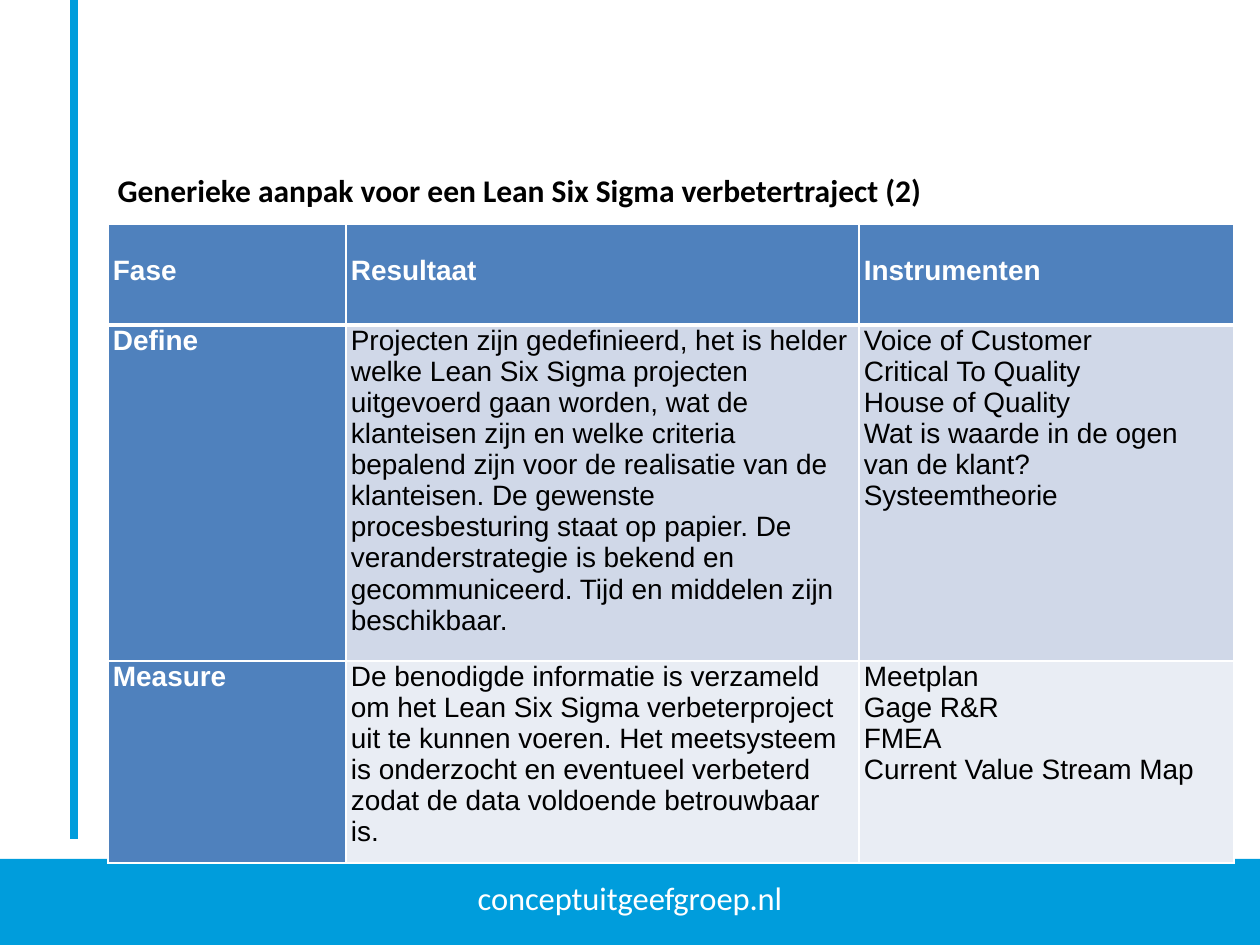
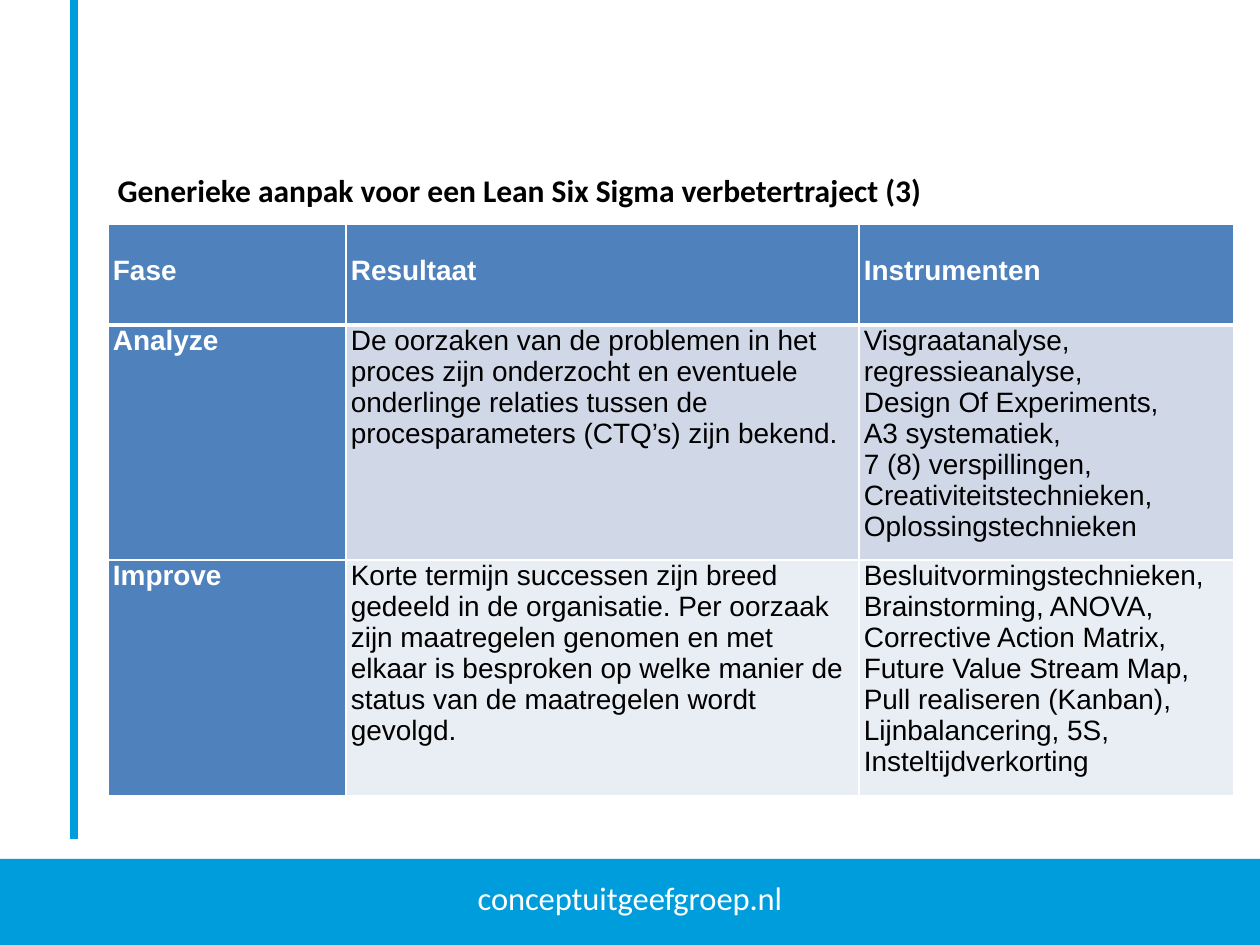
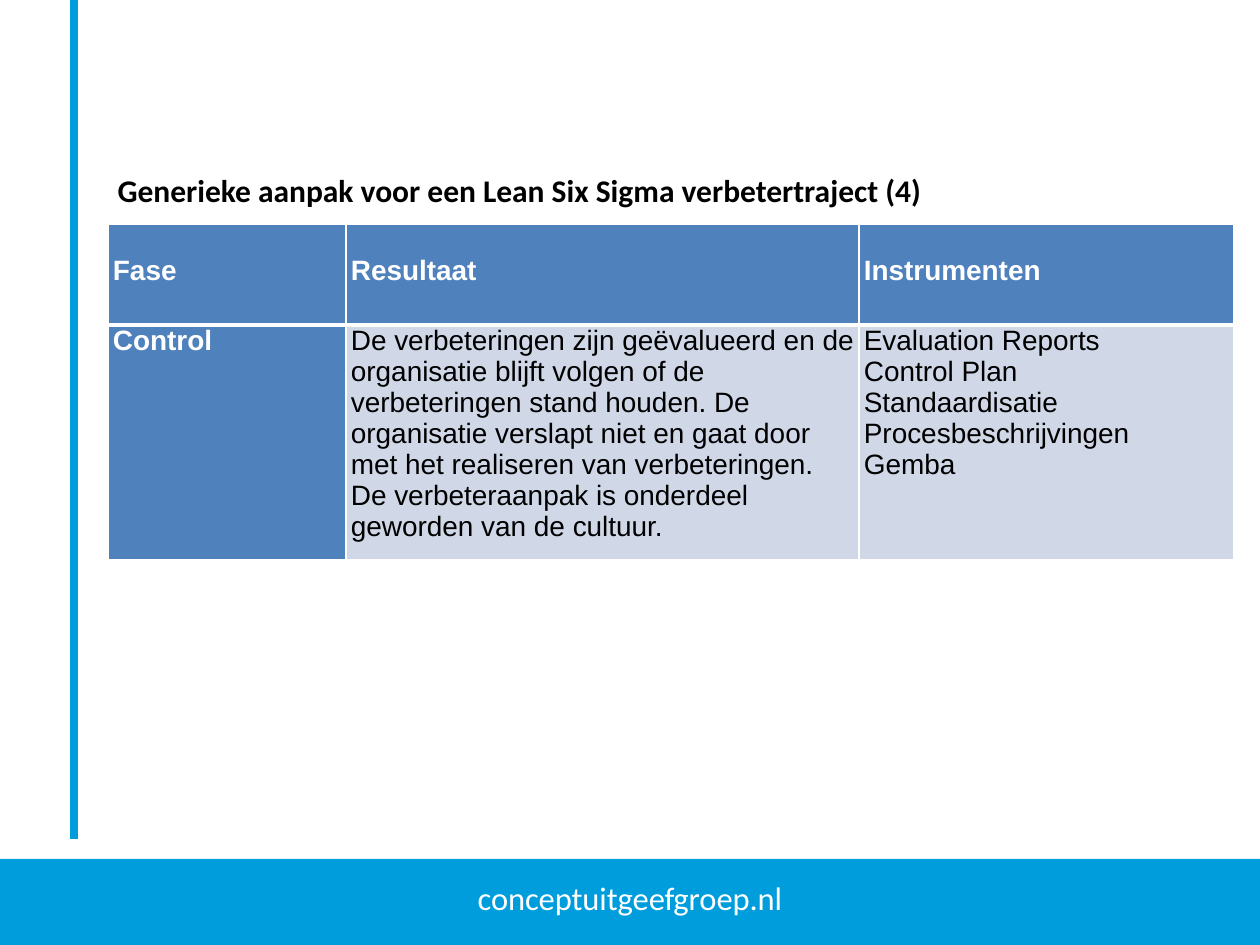
from lxml.etree import SubElement
from pptx import Presentation
from pptx.dml.color import RGBColor
from pptx.enum.shapes import MSO_CONNECTOR, MSO_SHAPE
from pptx.enum.text import MSO_ANCHOR, MSO_AUTO_SIZE, PP_ALIGN
from pptx.oxml.ns import qn
from pptx.util import Emu, Pt

# Content
TITLE = "Generieke aanpak voor een Lean Six Sigma verbetertraject ({})"
FOOTER = "conceptuitgeefgroep.nl"
HEADERS = ("Fase", "Resultaat", "Instrumenten")

# Each slide: number in the title, then (row height, phase, result, instruments)
SLIDES = [
    (2, [
        (336, "Define",
         "Projecten zijn gedefinieerd, het is helder welke Lean Six Sigma projecten "
         "uitgevoerd gaan worden, wat de klanteisen zijn en welke criteria bepalend zijn "
         "voor de realisatie van de klanteisen. De gewenste procesbesturing staat op "
         "papier. De veranderstrategie is bekend en gecommuniceerd. Tijd en middelen "
         "zijn beschikbaar.",
         ["Voice of Customer", "Critical To Quality", "House of Quality",
          "Wat is waarde in de ogen van de klant?", "Systeemtheorie"]),
        (202, "Measure",
         "De benodigde informatie is verzameld om het Lean Six Sigma verbeterproject uit "
         "te kunnen voeren. Het meetsysteem is onderzocht en eventueel verbeterd zodat "
         "de data voldoende betrouwbaar is.",
         ["Meetplan", "Gage R&R", "FMEA", "Current Value Stream Map"]),
    ]),
    (3, [
        (235, "Analyze",
         "De oorzaken van de problemen in het proces zijn onderzocht en eventuele "
         "onderlinge relaties tussen de procesparameters (CTQ’s) zijn bekend.",
         ["Visgraatanalyse, regressieanalyse,", "Design Of Experiments,",
          "A3 systematiek,", "7 (8) verspillingen,",
          "Creativiteitstechnieken, Oplossingstechnieken"]),
        (235, "Improve",
         "Korte termijn successen zijn breed gedeeld in de organisatie. Per oorzaak zijn "
         "maatregelen genomen en met elkaar is besproken op welke manier de status van "
         "de maatregelen wordt gevolgd.",
         ["Besluitvormingstechnieken,", "Brainstorming, ANOVA,",
          "Corrective Action Matrix,", "Future Value Stream Map,",
          "Pull realiseren (Kanban),", "Lijnbalancering, 5S,", "Insteltijdverkorting"]),
    ]),
    (4, [
        (235, "Control",
         "De verbeteringen zijn geëvalueerd en de organisatie blijft volgen of de "
         "verbeteringen stand houden. De organisatie verslapt niet en gaat door met het "
         "realiseren van verbeteringen. De verbeteraanpak is onderdeel geworden van de "
         "cultuur.",
         ["Evaluation Reports", "Control Plan", "Standaardisatie",
          "Procesbeschrijvingen", "Gemba"]),
    ]),
]

# Shared style, lengths in px
SLIDE_WIDTH, SLIDE_HEIGHT = 1260, 945
BRAND_BLUE, TABLE_BLUE = "009DDC", "4F81BD"
WHITE, BLACK = "FFFFFF", "000000"
BANDS = ("D0D8E8", "E9EDF4")
FOOTER_TOP = 859
RULE_X, RULE_BOTTOM = 74, 839
TITLE_BOX = (105, 165, 1155, 89)
TABLE_LEFT, TABLE_TOP = 108, 224
COLUMN_WIDTHS = (238, 513, 375)
HEADER_HEIGHT, LINE_HEIGHT, CELL_INSET = 101, 31, 5


def px(length):
    return Emu(round(length * 914400 / 126))


def color(value):
    return RGBColor.from_string(value)


def write(text_frame, text, size=16, font="Arial", ink=BLACK, bold=False,
          align=PP_ALIGN.LEFT, anchor=MSO_ANCHOR.TOP):
    text_frame.text = text
    text_frame.word_wrap = True
    text_frame.vertical_anchor = anchor
    for paragraph in text_frame.paragraphs:
        paragraph.alignment = align
        for run in paragraph.runs:
            run.font.size = Pt(size)
            run.font.name = font
            run.font.bold = bold
            run.font.color.rgb = color(ink)


def move_to_layout(shape, layout, position):
    """Put a shape behind the layout's placeholders, so that all slides share it."""
    shape.element.xpath(".//p:cNvPr")[0].set("id", str(100 + position))
    layout.shapes.element.insert(2 + position, shape.element)


def add_shared_parts(slide):
    # Footer band
    footer = slide.shapes.add_shape(MSO_SHAPE.RECTANGLE, 0, px(FOOTER_TOP), px(SLIDE_WIDTH),
                                    px(SLIDE_HEIGHT - FOOTER_TOP))
    footer.shadow.inherit = False
    footer.fill.solid()
    footer.fill.fore_color.rgb = color(BRAND_BLUE)
    footer.line.fill.background()
    write(footer.text_frame, FOOTER, size=32, font="Calibri", ink=WHITE,
          align=PP_ALIGN.CENTER, anchor=MSO_ANCHOR.BOTTOM)
    footer.element.xpath(".//a:rPr")[0].set("baseline", "30000")

    # Vertical rule
    rule = slide.shapes.add_connector(MSO_CONNECTOR.STRAIGHT, px(RULE_X), 0,
                                      px(RULE_X), px(RULE_BOTTOM))
    rule.line.color.rgb = color(BRAND_BLUE)
    rule.line.width = Pt(4.5)
    SubElement(rule.element.spPr, qn("a:effectLst"))

    for position, shape in enumerate((footer, rule)):
        move_to_layout(shape, slide.slide_layout, position)


def add_title(slide, text):
    title = slide.shapes.title
    title.left, title.top, title.width, title.height = map(px, TITLE_BOX)
    write(title.text_frame, text, size=18, font="Calibri", bold=True)
    title.text_frame.auto_size = MSO_AUTO_SIZE.SHAPE_TO_FIT_TEXT


def add_borders(cell, **widths):
    properties = cell._tc.get_or_add_tcPr()
    for side in "LRTB":
        line = SubElement(properties, qn(f"a:ln{side}"), w=str(Pt(widths.get(side, 1))))
        fill = SubElement(line, qn("a:solidFill"))
        SubElement(fill, qn("a:srgbClr"), val=WHITE)


def fill_cell(cell, text, row, column):
    is_header = row == 0
    is_label = is_header or column == 0
    cell.margin_left = cell.margin_right = px(CELL_INSET)
    cell.margin_top = px(LINE_HEIGHT if is_header else 0)
    cell.margin_bottom = 0
    cell.vertical_anchor = MSO_ANCHOR.TOP
    write(cell.text_frame, text, ink=WHITE if is_label else BLACK, bold=is_label, anchor=None)
    add_borders(cell, T=3 if row == 1 else 1, B=3 if is_header else 1)
    cell.fill.solid()
    cell.fill.fore_color.rgb = color(TABLE_BLUE if is_label else BANDS[(row - 1) % 2])


def add_phase_table(slide, phases):
    heights = [HEADER_HEIGHT] + [phase[0] for phase in phases]
    rows = [HEADERS] + [(name, result, "\n".join(instruments))
                        for _, name, result, instruments in phases]
    table = slide.shapes.add_table(len(rows), len(HEADERS), px(TABLE_LEFT), px(TABLE_TOP),
                                   px(sum(COLUMN_WIDTHS)), px(sum(heights))).table
    for column, width in zip(table.columns, COLUMN_WIDTHS):
        column.width = px(width)
    for row, height in zip(table.rows, heights):
        row.height = px(height)
    for row, texts in enumerate(rows):
        for column, text in enumerate(texts):
            fill_cell(table.cell(row, column), text, row, column)


def main():
    presentation = Presentation()
    presentation.slide_width, presentation.slide_height = px(SLIDE_WIDTH), px(SLIDE_HEIGHT)
    title_only = presentation.slide_layouts[5]
    for index, (number, phases) in enumerate(SLIDES):
        slide = presentation.slides.add_slide(title_only)
        if index == 0:
            add_shared_parts(slide)
        add_title(slide, TITLE.format(number))
        add_phase_table(slide, phases)
    presentation.save("out.pptx")


if __name__ == "__main__":
    main()
